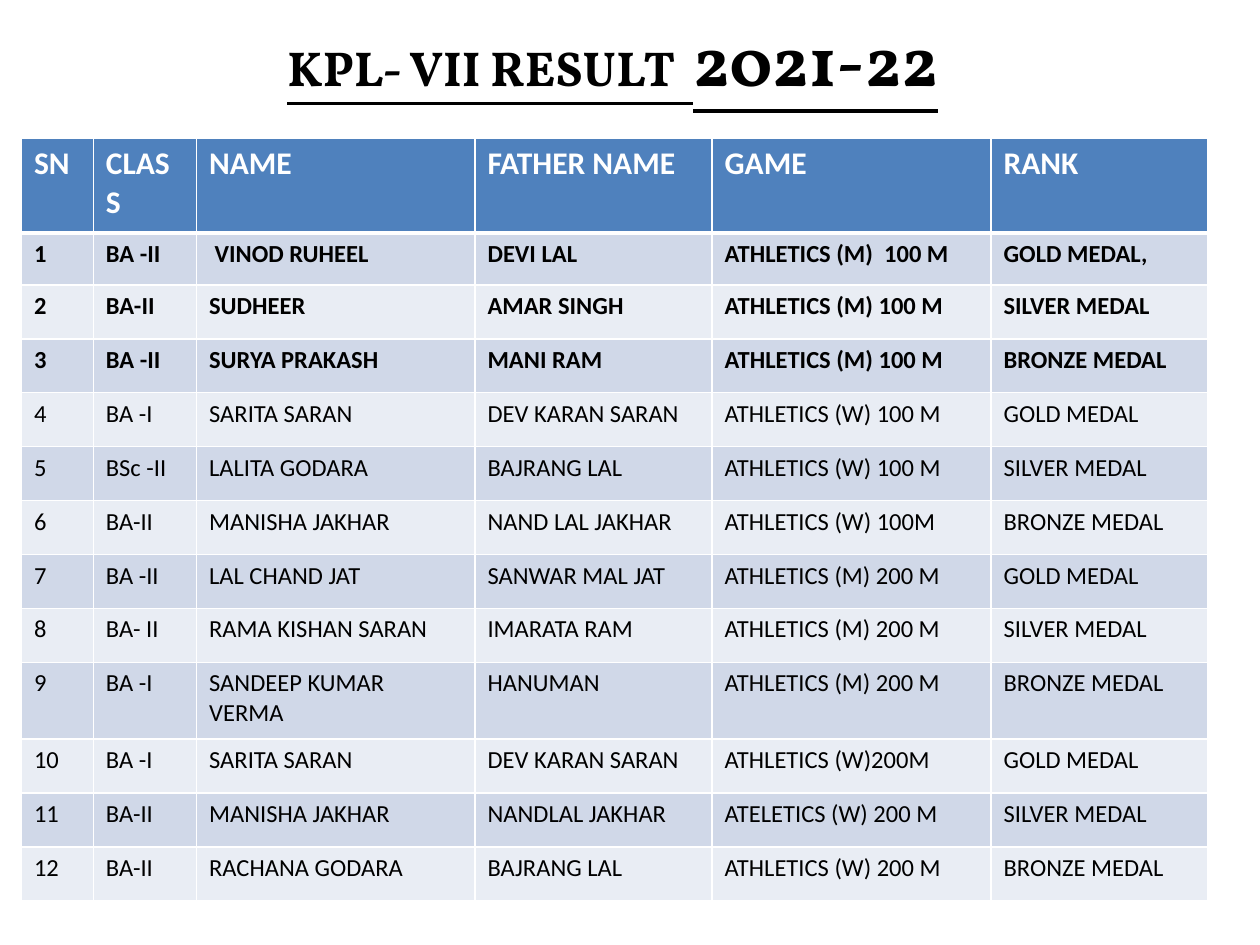
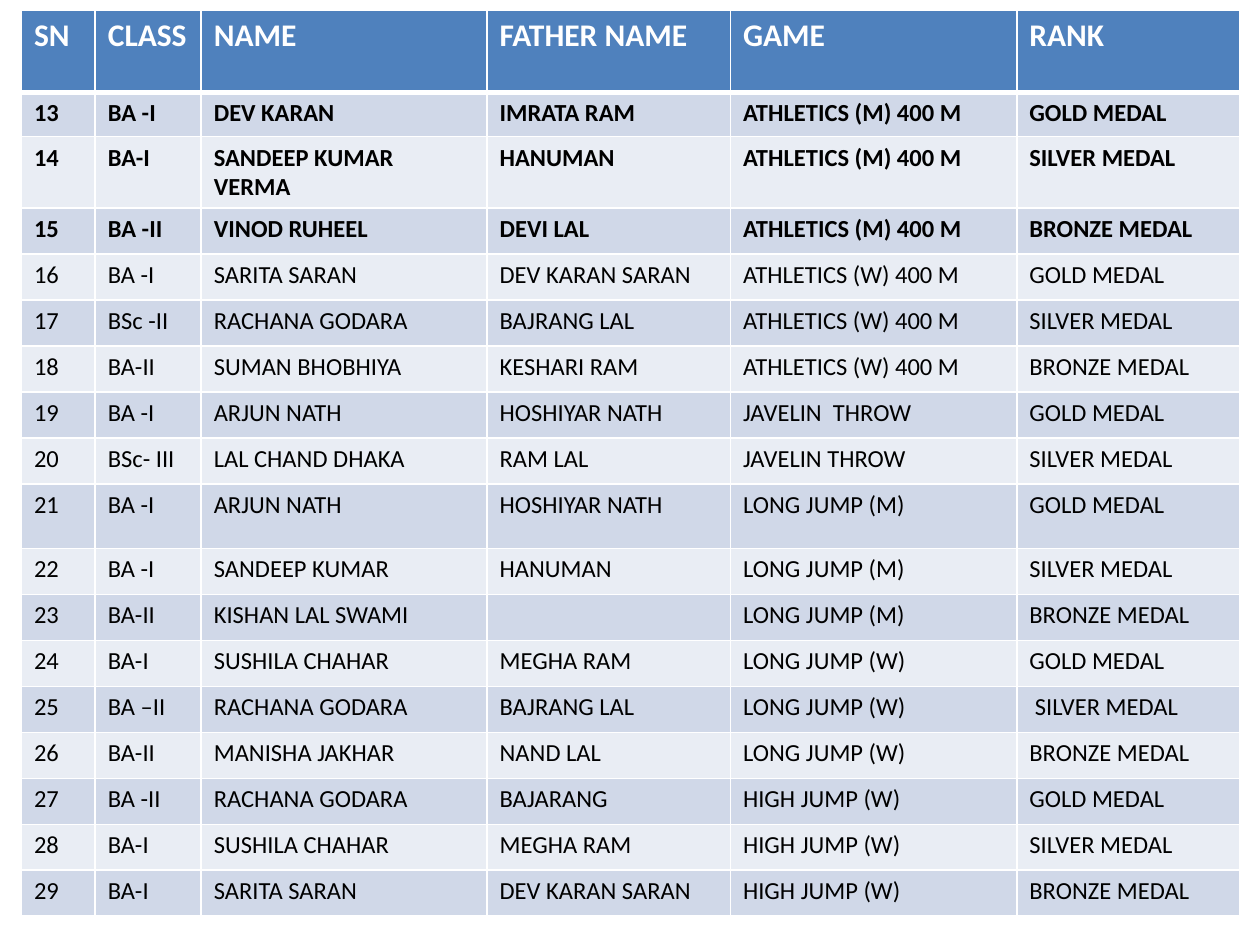
from dataclasses import dataclass, field
from typing import NamedTuple

from lxml.etree import SubElement
from pptx import Presentation
from pptx.dml.color import RGBColor
from pptx.enum.text import MSO_AUTO_SIZE as AutoSize
from pptx.oxml.ns import qn
from pptx.util import Inches, Pt

SLIDE_W, SLIDE_H = Inches(10), Inches(7.5)
WHITE, BLACK, HEADER_BLUE = "FFFFFF", "000000", "4F81BD"
BANDS = ("D0D8E8", "E9EDF4")
TABLE_FONT, TITLE_FONT = "Calibri", "Vollkorn"
HEADER_SIZE, BODY_SIZE = 18, 14
THIN, THICK = 1, 3
BOLD_ROWS = 3
HEADINGS = ("SN", "CLASS", "NAME", "FATHER NAME", "GAME", "RANK")
COLUMN_PERCENTS = (6.06, 8.7, 23.46, 19.98, 23.5, 18.3)
GOLD, SILVER, BRONZE = "GOLD MEDAL", "SILVER MEDAL", "BRONZE MEDAL"


class Result(NamedTuple):
    course: str
    name: str
    father: str
    game: str
    rank: str


class TitlePart(NamedTuple):
    text: str
    size: int


@dataclass
class ResultPage:
    first_sn: int
    top: float
    width: float
    row_height: float
    special_heights: dict[int, float]
    results: list[Result]
    title: list[TitlePart] = field(default_factory=list)


PAGES = [
    ResultPage(
        first_sn=1, top=14.67, width=94.2, row_height=5.71,
        special_heights={0: 10, 1: 5.47, 9: 8.13},
        title=[TitlePart("KPL- VII RESULT  ", 28), TitlePart("2021-22", 40)],
        results=[
            Result("BA -II", " VINOD RUHEEL", "DEVI LAL", "ATHLETICS (M)  100 M", "GOLD MEDAL,"),
            Result("BA-II", "SUDHEER", "AMAR SINGH", "ATHLETICS (M) 100 M", SILVER),
            Result("BA -II", "SURYA PRAKASH", "MANI RAM", "ATHLETICS (M) 100 M", BRONZE),
            Result("BA -I", "SARITA SARAN", "DEV KARAN SARAN", "ATHLETICS (W) 100 M", GOLD),
            Result("BSc -II", "LALITA GODARA", "BAJRANG LAL", "ATHLETICS (W) 100 M", SILVER),
            Result("BA-II", "MANISHA JAKHAR", "NAND LAL JAKHAR", "ATHLETICS (W) 100M", BRONZE),
            Result("BA -II", "LAL CHAND JAT", "SANWAR MAL JAT", "ATHLETICS (M) 200 M", GOLD),
            Result("BA- II", "RAMA KISHAN SARAN", "IMARATA RAM", "ATHLETICS (M) 200 M", SILVER),
            Result("BA -I", "SANDEEP KUMAR VERMA", "HANUMAN", "ATHLETICS (M) 200 M", BRONZE),
            Result("BA -I", "SARITA SARAN", "DEV KARAN SARAN", "ATHLETICS (W)200M", GOLD),
            Result("BA-II", "MANISHA JAKHAR", "NANDLAL JAKHAR", "ATELETICS (W) 200 M", SILVER),
            Result("BA-II", "RACHANA GODARA", "BAJRANG LAL", "ATHLETICS (W) 200 M", BRONZE),
        ],
    ),
    ResultPage(
        first_sn=13, top=1.1, width=96.7, row_height=4.87,
        special_heights={0: 8.67, 1: 4.67, 2: 7.6, 9: 6.8},
        results=[
            Result("BA -I", "DEV KARAN", "IMRATA RAM", "ATHLETICS (M) 400 M", GOLD),
            Result("BA-I", "SANDEEP KUMAR VERMA", "HANUMAN", "ATHLETICS (M) 400 M", SILVER),
            Result("BA -II", "VINOD RUHEEL", "DEVI LAL", "ATHLETICS (M) 400 M", BRONZE),
            Result("BA -I", "SARITA SARAN", "DEV KARAN SARAN", "ATHLETICS (W) 400 M", GOLD),
            Result("BSc -II", "RACHANA GODARA", "BAJRANG LAL", "ATHLETICS (W) 400 M", SILVER),
            Result("BA-II", "SUMAN BHOBHIYA", "KESHARI RAM", "ATHLETICS (W) 400 M", BRONZE),
            Result("BA -I", "ARJUN NATH", "HOSHIYAR NATH", "JAVELIN  THROW", GOLD),
            Result("BSc- III", "LAL CHAND DHAKA", "RAM LAL", "JAVELIN THROW", SILVER),
            Result("BA -I", "ARJUN NATH", "HOSHIYAR NATH", "LONG JUMP (M)", GOLD),
            Result("BA -I", "SANDEEP KUMAR", "HANUMAN", "LONG JUMP (M)", SILVER),
            Result("BA-II", "KISHAN LAL SWAMI", "", "LONG JUMP (M)", BRONZE),
            Result("BA-I", "SUSHILA CHAHAR", "MEGHA RAM", "LONG JUMP (W)", GOLD),
            Result("BA –II", "RACHANA GODARA", "BAJRANG LAL", "LONG JUMP (W)", " SILVER MEDAL"),
            Result("BA-II", "MANISHA JAKHAR", "NAND LAL", "LONG JUMP (W)", BRONZE),
            Result("BA -II", "RACHANA GODARA", "BAJARANG", "HIGH JUMP (W)", GOLD),
            Result("BA-I", "SUSHILA CHAHAR", "MEGHA RAM", "HIGH JUMP (W)", SILVER),
            Result("BA-I", "SARITA SARAN", "DEV KARAN SARAN", "HIGH JUMP (W)", BRONZE),
        ],
    ),
]


def color(value: str) -> RGBColor:
    return RGBColor.from_string(value)


def across(percent: float) -> int:
    return round(SLIDE_W * percent / 100)


def down(percent: float) -> int:
    return round(SLIDE_H * percent / 100)


def style_run(r, font: str, size: int, ink: str, bold: bool) -> None:
    r.font.name = font
    r.font.size = Pt(size)
    r.font.bold = bold
    r.font.color.rgb = color(ink)


def border_cell(cell, top: int, bottom: int) -> None:
    props = cell._tc.get_or_add_tcPr()
    for side, width in (("L", THIN), ("R", THIN), ("T", top), ("B", bottom)):
        ln = SubElement(props, qn(f"a:ln{side}"), w=str(Pt(width)))
        fill = SubElement(ln, qn("a:solidFill"))
        SubElement(fill, qn("a:srgbClr"), val=WHITE)


def draw_cell(cell, text: str, row: int) -> None:
    header = row == 0
    size = HEADER_SIZE if header else BODY_SIZE
    border_cell(cell, THICK if row == 1 else THIN, THICK if header else THIN)
    cell.fill.solid()
    cell.fill.fore_color.rgb = color(HEADER_BLUE if header else BANDS[(row - 1) % 2])
    p = cell.text_frame.paragraphs[0]
    if not text:
        SubElement(p._p, qn("a:endParaRPr"), sz=str(size * 100))
        return
    p.text = text
    style_run(p.runs[0], TABLE_FONT, size, WHITE if header else BLACK, row <= BOLD_ROWS)


def draw_title(s, parts: list[TitlePart]) -> None:
    tf = s.shapes.add_textbox(across(15.4), down(1.6), across(67.5), down(9.2)).text_frame
    tf.word_wrap = True
    tf.auto_size = AutoSize.SHAPE_TO_FIT_TEXT
    tf.margin_left, tf.margin_top = across(7.4), down(0.13)
    tf.margin_right = tf.margin_bottom = 0
    p = tf.paragraphs[0]
    for part in parts:
        r = p.add_run()
        r.text = part.text
        style_run(r, TITLE_FONT, part.size, BLACK, True)
        r.font.underline = True


def draw_results(s, page: ResultPage) -> None:
    rows = [HEADINGS] + [(str(sn), *result) for sn, result in enumerate(page.results, page.first_sn)]
    heights = [page.special_heights.get(i, page.row_height) for i in range(len(rows))]
    table = s.shapes.add_table(len(rows), len(HEADINGS), across(1.7), down(page.top),
                               across(page.width), down(sum(heights))).table
    for column, percent in zip(table.columns, COLUMN_PERCENTS):
        column.width = across(page.width * percent / 100)
    for i, (texts, height) in enumerate(zip(rows, heights)):
        table.rows[i].height = down(height)
        for j, text in enumerate(texts):
            draw_cell(table.cell(i, j), text, i)


def main() -> None:
    prs = Presentation()
    prs.slide_width, prs.slide_height = SLIDE_W, SLIDE_H
    for page in PAGES:
        s = prs.slides.add_slide(prs.slide_layouts[6])
        if page.title:
            draw_title(s, page.title)
        draw_results(s, page)
    prs.save("out.pptx")


if __name__ == "__main__":
    main()
